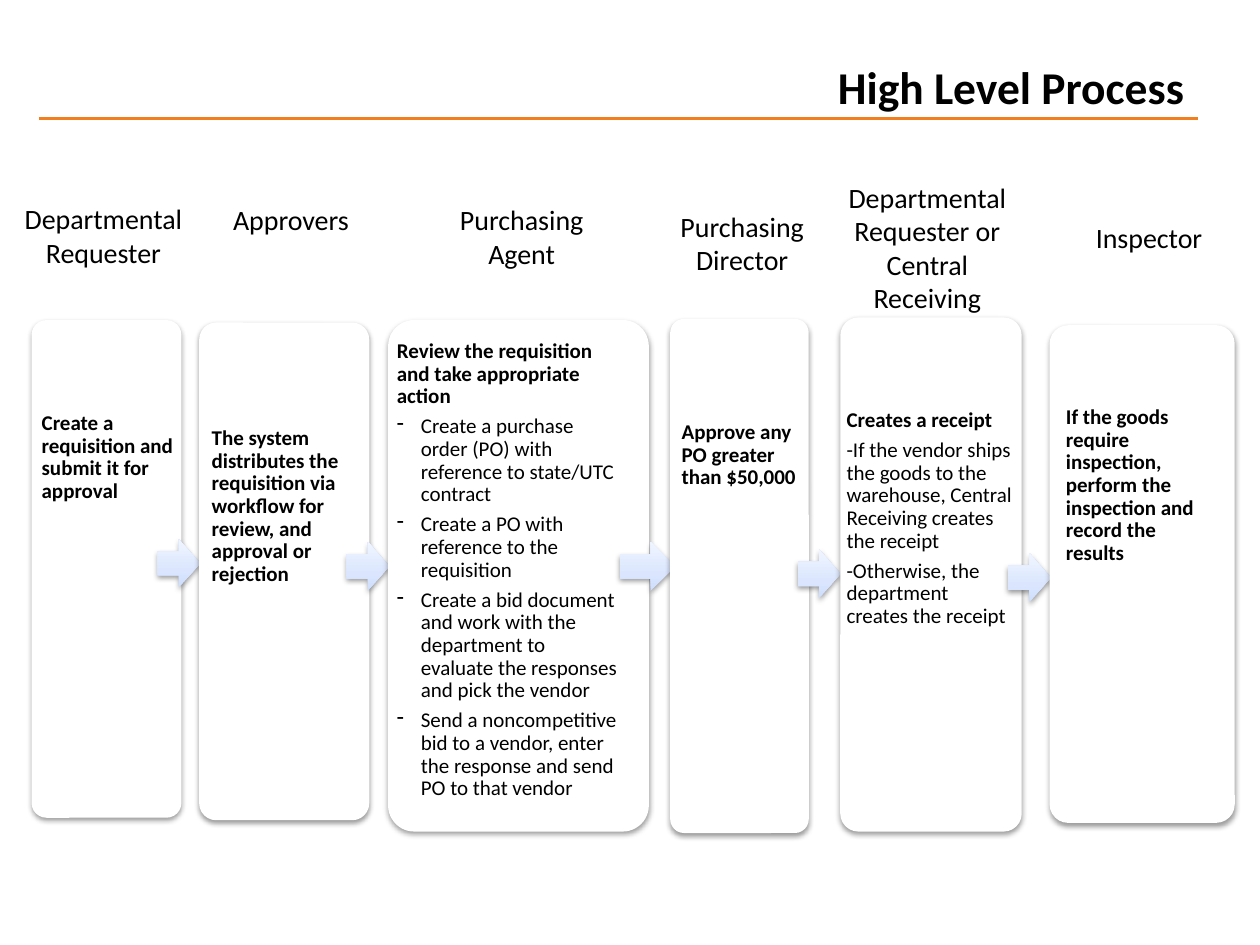
from lxml.etree import SubElement
from pptx import Presentation
from pptx.dml.color import RGBColor
from pptx.enum.shapes import MSO_CONNECTOR as Connector, MSO_SHAPE as Preset
from pptx.enum.text import MSO_ANCHOR as Anchor, PP_ALIGN as Align
from pptx.oxml.ns import qn
from pptx.util import Pt

BLACK = RGBColor(0x00, 0x00, 0x00)
WHITE = RGBColor(0xFF, 0xFF, 0xFF)
ORANGE = RGBColor(0xF1, 0x7E, 0x1F)
ARROW_STOPS = (
    (0, RGBColor(0xCD, 0xDD, 0xFE)),
    (35, RGBColor(0xDB, 0xE6, 0xFE)),
    (100, RGBColor(0xF0, 0xF5, 0xFF)),
)
BULLET_INDENT = 13.7

COLUMNS = [
    dict(
        heading="Departmental Requester", heading_box=(5.8, 111.6, 106.6, 46),
        card=(18, 182.9, 85.7, 284.4), text_box=(20.2, 182.9, 87.8, 278.6), text_top=52.7,
        lead="Create a requisition and submit it for approval",
        arrow=(90, 308.2, 24.5, 27.4),
    ),
    dict(
        heading="Approvers", heading_box=(120.2, 112.3, 92.2, 26.6),
        card=(113.8, 184.3, 97.2, 284.4), text_box=(117.4, 184.3, 95.8, 278.6), text_top=59.9,
        lead="The system distributes the requisition via workflow for review, "
             "and approval or rejection",
        arrow=(198, 309.6, 24.5, 28),
    ),
    dict(
        heading="Purchasing Agent", heading_box=(252, 112.3, 92.2, 46),
        card=(221.8, 182.9, 149, 292.3), text_box=(223.2, 182.2, 135.4, 285.8), text_top=12.3,
        lead="Review the requisition and take appropriate action",
        bullet="-",
        details=(
            "Create a purchase order (PO) with reference to state/UTC contract",
            "Create a PO with reference to the requisition",
            "Create a bid document and work with the department to evaluate "
            "the responses and pick the vendor",
            "Send a noncompetitive bid to a vendor, enter the response and "
            "send PO to that vendor",
        ),
        arrow=(354.2, 309.6, 31.7, 28),
    ),
    dict(
        heading="Purchasing Director", heading_box=(378, 115.9, 92.2, 46),
        card=(383, 182.2, 79.2, 293.8), text_box=(385.9, 185, 82.1, 287.3), text_top=55.7,
        lead="Approve any PO greater than $50,000",
        arrow=(455.8, 313.9, 24.5, 28),
    ),
    dict(
        heading="Departmental Requester or Central Receiving",
        heading_box=(477.4, 99.4, 105.1, 85),
        card=(480.2, 181.4, 103.7, 293.8), text_box=(480.2, 185.8, 103.7, 287.3), text_top=48.1,
        lead="Creates a receipt",
        details=(
            "-If the vendor ships the goods to the warehouse, Central Receiving "
            "creates the receipt",
            "-Otherwise, the department\vcreates the receipt",
        ),
        arrow=(576, 316.1, 24.5, 28),
    ),
    dict(
        heading="Inspector", heading_box=(612, 122.4, 89.3, 26.6),
        card=(599.8, 185.8, 105.8, 284.4), text_box=(605.5, 188.6, 87.1, 278.6), text_top=43.6,
        lead="If the goods require inspection, perform the inspection and record the results",
    ),
]


def write_text(paragraph, text, size=12, bold=False, align=Align.LEFT,
               line_spacing=None, space_after=None, bullet=None):
    if bullet:
        properties = paragraph._p.get_or_add_pPr()
        properties.set("marL", str(Pt(BULLET_INDENT)))
        properties.set("indent", str(-Pt(BULLET_INDENT)))
        SubElement(properties, qn("a:buChar"), char=bullet)
    paragraph.text = text
    paragraph.alignment = align
    if line_spacing:
        paragraph.line_spacing = line_spacing
    if space_after:
        paragraph.space_after = Pt(space_after)
    for run in paragraph.runs:
        run.font.name = "Calibri"
        run.font.size = Pt(size)
        run.font.bold = bold
        run.font.color.rgb = BLACK


class ProcessSlide:
    body_style = dict(line_spacing=0.9, space_after=4.2)

    def __init__(self, presentation):
        self.slide = presentation.slides.add_slide(presentation.slide_layouts[6])

    def rule(self, left, right, y):
        line = self.slide.shapes.add_connector(
            Connector.STRAIGHT, Pt(left), Pt(y), Pt(right), Pt(y))
        line.line.color.rgb = ORANGE
        line.line.width = Pt(2)
        SubElement(line._element.spPr, qn("a:effectLst"))

    def text_frame(self, box, margins=(7.2, 3.6, 7.2, 3.6)):
        frame = self.slide.shapes.add_textbox(*map(Pt, box)).text_frame
        frame.word_wrap = True
        frame.vertical_anchor = Anchor.TOP
        (frame.margin_left, frame.margin_top,
         frame.margin_right, frame.margin_bottom) = map(Pt, margins)
        return frame

    def heading(self, text, box, **style):
        write_text(self.text_frame(box).paragraphs[0], text, **style)

    def body(self, lead, details, box, top, bullet):
        frame = self.text_frame(box, (3.6, top, 3.6, 3.6))
        write_text(frame.paragraphs[0], lead, bold=True, **self.body_style)
        for detail in details:
            write_text(frame.add_paragraph(), detail, bullet=bullet, **self.body_style)

    def raised_shape(self, preset, box):
        shape = self.slide.shapes.add_shape(preset, *map(Pt, box))
        shape.line.fill.background()
        shape.shadow.inherit = False
        effects = shape._element.spPr.find(qn("a:effectLst"))
        shadow = SubElement(effects, qn("a:outerShdw"), blurRad=str(Pt(3.1)),
                            dist=str(Pt(1.6)), dir="5400000", rotWithShape="0")
        color = SubElement(shadow, qn("a:srgbClr"), val=str(BLACK))
        SubElement(color, qn("a:alpha"), val="38000")
        return shape

    def card(self, box):
        shape = self.raised_shape(Preset.ROUNDED_RECTANGLE, box)
        shape.adjustments[0] = 0.1
        shape.fill.solid()
        shape.fill.fore_color.rgb = WHITE

    def arrow(self, box):
        shape = self.raised_shape(Preset.RIGHT_ARROW, box)
        shape.fill.gradient()
        shape.fill.gradient_angle = 90
        stops = shape._element.spPr.find(qn("a:gradFill")).find(qn("a:gsLst"))
        for stop in list(stops):
            stops.remove(stop)
        for percent, color in ARROW_STOPS:
            stop = SubElement(stops, qn("a:gs"), pos=str(percent * 1000))
            SubElement(stop, qn("a:srgbClr"), val=str(color))

    def column(self, heading, heading_box, card, text_box, text_top, lead,
               details=(), bullet=None, arrow=None):
        self.heading(heading, heading_box, size=16, align=Align.CENTER)
        self.card(card)
        self.body(lead, details, text_box, text_top, bullet)
        if arrow:
            self.arrow(arrow)


def main():
    presentation = Presentation()
    presentation.slide_width, presentation.slide_height = Pt(720), Pt(540)
    slide = ProcessSlide(presentation)
    slide.rule(22.3, 684.7, 67.7)
    for column in COLUMNS:
        slide.column(**column)
    slide.heading("High Level Process", (293.8, 30.2, 390.2, 41.8),
                  size=26, bold=True, align=Align.RIGHT)
    presentation.save("out.pptx")


if __name__ == "__main__":
    main()
